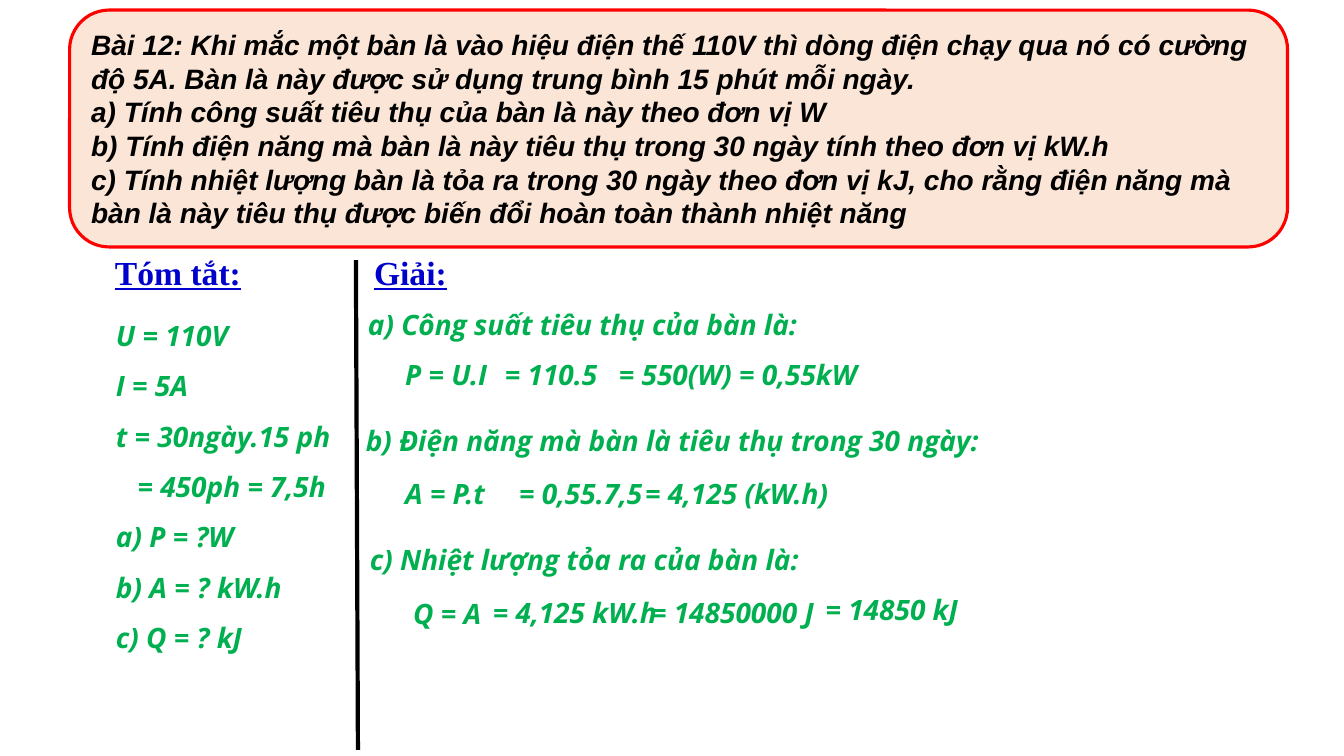
import pptx
import pptx.util
import pptx.dml.color
import pptx.enum.shapes
import pptx.enum.text
import pptx.oxml.ns
import lxml.etree

UNIT = pptx.util.Inches(0.1)  # one column or row of the page grid
COLOURS = {"panel": "FBE5D6", "border": "FF0000", "ink": "000000",
           "heading": "0000CC", "answer": "00B050"}
PROBLEM = {"name": "Arial", "size": 20, "bold": True, "italic": True, "color": "ink"}
HEADING = {"name": "Times New Roman", "size": 24, "bold": True, "italic": False,
           "underline": True, "color": "heading"}
ANSWER = {"name": "Open Sans", "size": 20, "bold": True, "italic": True, "color": "answer"}
LEFT = pptx.enum.text.PP_ALIGN.LEFT
JUSTIFY = pptx.enum.text.PP_ALIGN.JUSTIFY
TOP = pptx.enum.text.MSO_ANCHOR.TOP
MIDDLE = pptx.enum.text.MSO_ANCHOR.MIDDLE


def grid(*cells):
    return [round(cell * UNIT) for cell in cells]


def colour(key):
    return pptx.dml.color.RGBColor.from_string(COLOURS[key])


def format_font(font, style):
    for key, value in style.items():
        if key == "color":
            font.color.rgb = colour(value)
        else:
            setattr(font, key, pptx.util.Pt(value) if key == "size" else value)


def write(shape, lines, style, align=LEFT, anchor=TOP, wrap=True, spacing=1.0, indents=None):
    """Fill a shape with unbulleted lines; indents maps a line number to grid columns."""
    frame = shape.text_frame
    frame.text = "\n".join(lines)
    frame.word_wrap = wrap
    frame.vertical_anchor = anchor
    frame.auto_size = pptx.enum.text.MSO_AUTO_SIZE.NONE
    for number, para in enumerate(frame.paragraphs):
        props = para._p.get_or_add_pPr()
        props.set("marL", str(grid((indents or {}).get(number, 0))[0]))
        props.set("indent", "0")
        lxml.etree.SubElement(props, pptx.oxml.ns.qn("a:buNone"))
        para.alignment = align
        para.line_spacing = spacing
        para.space_before = para.space_after = pptx.util.Pt(0)
        for span in para.runs:
            format_font(span.font, style)


def place(shape, *cells):
    shape.left, shape.top, shape.width, shape.height = grid(*cells)


def add_problem(page, left, top, width, height):
    panel = page.shapes.add_shape(pptx.enum.shapes.MSO_SHAPE.ROUNDED_RECTANGLE,
                                  *grid(left, top, width, height))
    panel.shadow.inherit = False
    panel.fill.solid()
    panel.fill.fore_color.rgb = colour("panel")
    panel.line.color.rgb = colour("border")
    panel.line.width = pptx.util.Pt(2.25)
    write(panel, [
        "Bài 12: Khi mắc một bàn là vào hiệu điện thế 110V thì dòng điện chạy qua nó có "
        "cường độ 5A. Bàn là này được sử dụng trung bình 15 phút mỗi ngày.",
        "a) Tính công suất tiêu thụ của bàn là này theo đơn vị W",
        "b) Tính điện năng mà bàn là này tiêu thụ trong 30 ngày tính theo đơn vị kW.h",
        "c) Tính nhiệt lượng bàn là tỏa ra trong 30 ngày theo đơn vị kJ, cho rằng điện năng "
        "mà bàn là này tiêu thụ được biến đổi hoàn toàn thành nhiệt năng",
    ], PROBLEM, anchor=MIDDLE)


def add_heading(holder, text, left, top):
    place(holder, left, top, 20.8, 5)
    write(holder, [text], HEADING, JUSTIFY)


def add_summary(heading, body, left, top, width, height):
    add_heading(heading, "Tóm tắt:", left, top)
    place(body, left + 0.1, top + 4.9, width, height - 4.9)
    write(body, ["U = 110V", "I = 5A", "t = 30ngày.15 ph", "= 450ph = 7,5h",
                 "a) P = ?W", "b) A = ? kW.h", "c) Q = ? kJ"],
          ANSWER, JUSTIFY, spacing=1.5, indents={3: 2.15})


def add_divider(page, left, top, shift, height):
    line = page.shapes.add_connector(pptx.enum.shapes.MSO_CONNECTOR.STRAIGHT,
                                     *grid(left, top, left + shift, top + height))
    line.line.color.rgb = colour("ink")
    line.line.width = pptx.util.Pt(3)
    lxml.etree.SubElement(line._element.spPr, pptx.oxml.ns.qn("a:effectLst"))


def add_solution(page, heading, left, top):
    """Each step is text, column, row and width, measured from the region's corner."""
    add_heading(heading, "Giải:", left + 0.8, top)
    steps = [
        ("a) Công suất tiêu thụ của bàn là:", 0.2, 5.5, 46.1),
        ("P = U.I", 3.9, 10.5, 11.3),
        ("= 110.5", 13.8, 10.5, 12),
        ("= 550(W) = 0,55kW", 25.1, 10.5, 26.4),
        ("b) Điện năng mà bàn là tiêu thụ trong 30 ngày:", 0, 17, 63.7),
        ("A = P.t", 3.9, 22.3, 11.1),
        ("= 0,55.7,5", 15.2, 22.3, 15.3),
        ("= 4,125 (kW.h)", 27.7, 22.3, 20.6),
        ("c) Nhiệt lượng tỏa ra của bàn là:", 0.4, 28.8, 45),
        ("Q = A", 4.7, 34.2, 10),
        ("= 4,125 kW.h", 12.6, 34.1, 19.5),
        ("= 14850000 J", 28.3, 34.1, 20),
        ("= 14850 kJ", 45.6, 33.8, 16.1),
    ]
    for text, column, row, width in steps:
        box = page.shapes.add_textbox(*grid(left + column, top + row, width, 4.4))
        write(box, [text], ANSWER, wrap=False)


def main():
    deck = pptx.Presentation()
    deck.slide_width = pptx.util.Inches(13.33)
    deck.slide_height = pptx.util.Inches(7.5)
    page = deck.slides.add_slide(deck.slide_layouts.get_by_name("Comparison"))
    title, summary_heading, summary, solution_heading, spare = page.placeholders
    for holder in (title, spare):
        holder._element.getparent().remove(holder._element)
    add_problem(page, 6.9, 1, 120.8, 23.5)
    add_summary(summary_heading, summary, 10.4, 24.5, 24.9, 41.3)
    add_divider(page, 35.3, 25.8, 0.2, 48.6)
    add_solution(page, solution_heading, 35.3, 24.5)
    deck.save("out.pptx")


if __name__ == "__main__":
    main()
